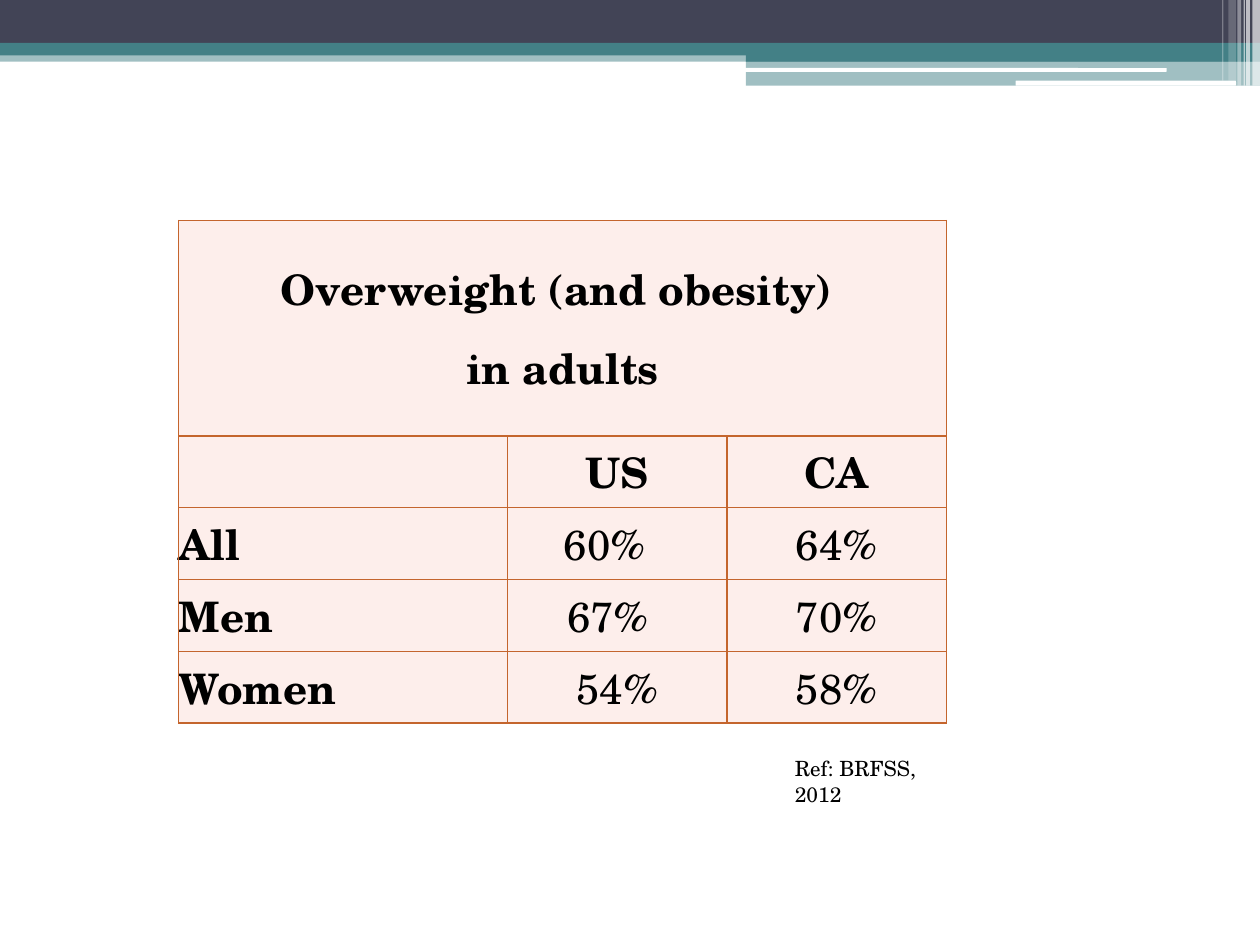
from lxml import etree
from pptx import Presentation
from pptx.dml.color import RGBColor
from pptx.enum.shapes import MSO_SHAPE
from pptx.enum.text import MSO_ANCHOR, PP_ALIGN
from pptx.oxml.ns import qn
from pptx.util import Inches, Pt

RECTANGLE, ROUNDED = MSO_SHAPE.RECTANGLE, MSO_SHAPE.ROUNDED_RECTANGLE
LEFT, CENTER, MIDDLE = PP_ALIGN.LEFT, PP_ALIGN.CENTER, MSO_ANCHOR.MIDDLE
FONT = "TeX Gyre Schola"
NAVY, TEAL, WHITE, BLACK = "424456", "438086", "FFFFFF", "000000"
CELL_FILL, BORDER = "FDEEEB", "C4652D"

BANNER = [
    (RECTANGLE, 0, 0.4, 10, 0.09, TEAL, 50),
    (RECTANGLE, 0, 0, 10, 0.34, NAVY, 100),
    (RECTANGLE, 0, 0.34, 10, 0.1, TEAL, 100),
    (RECTANGLE, 5.92, 0.39, 4.08, 0.1, TEAL, 100),
    (RECTANGLE, 5.92, 0.48, 4.08, 0.2, TEAL, 50),
    (ROUNDED, 5.91, 0.54, 3.35, 0.03, WHITE, 100),
    (ROUNDED, 8.06, 0.64, 1.75, 0.04, WHITE, 100),
]
STRIPES = [
    (9.94, 0.06, 0.68, 65),
    (9.89, 0.03, 0.68, 65),
    (9.87, 0.01, 0.68, 60),
    (9.82, 0.03, 0.68, 40),
    (9.75, 0.06, 0.64, 20),
    (9.7, 0.01, 0.64, 30),
]
TITLE = ["Overweight (and obesity) ", "in adults"]
ROWS = [
    ("", "US", "CA"),
    ("All", "60%", "64%"),
    ("Men", "67%", "70%"),
    ("Women", "54%", "58%"),
]
RIGHT_MARGINS = {"60%": 0.2, "67%": 0.15}
COLUMN_WIDTHS = [2.61, 1.74, 1.74]
ROW_HEIGHTS = [1.71] + [0.57] * len(ROWS)
REFERENCE = "Ref: BRFSS, 2012"


def color(value):
    """Turn a hex string into a colour."""
    return RGBColor.from_string(value)


def add_bar(slide, kind, left, top, width, height, fill, opacity):
    """Add a borderless bar with an opacity in percent."""
    shape = slide.shapes.add_shape(
        kind, Inches(left), Inches(top), Inches(width), Inches(height))
    shape.shadow.inherit = False
    shape.line.fill.background()
    shape.fill.solid()
    shape.fill.fore_color.rgb = color(fill)
    if opacity < 100:
        value = shape._element.spPr.find(".//" + qn("a:srgbClr"))
        etree.SubElement(value, qn("a:alpha"), val=str(opacity * 1000))


def write(frame, lines, size, bold=False, alignment=LEFT, gap=0):
    """Write one paragraph per line into a text frame."""
    for index, line in enumerate(lines):
        paragraph = frame.add_paragraph() if index else frame.paragraphs[0]
        paragraph.alignment = alignment
        if index:
            paragraph.space_before = Pt(gap)
        paragraph.text = line
        style = {"name": FONT, "size": Pt(size), "bold": bold}
        for name, value in style.items():
            setattr(paragraph.font, name, value)
        paragraph.font.color.rgb = color(BLACK)


def format_cell(cell, right_margin=0):
    """Give a cell its borders, fill, anchor and margins."""
    properties = cell._tc.get_or_add_tcPr()
    for side in ("lnL", "lnR", "lnT", "lnB"):
        line = etree.SubElement(properties, qn("a:" + side), w=str(Pt(0.75)))
        fill = etree.SubElement(line, qn("a:solidFill"))
        etree.SubElement(fill, qn("a:srgbClr"), val=BORDER)
    cell.fill.solid()
    cell.fill.fore_color.rgb = color(CELL_FILL)
    layout = {"vertical_anchor": MIDDLE, "margin_left": 0, "margin_top": 0,
              "margin_bottom": 0, "margin_right": Inches(right_margin)}
    for name, value in layout.items():
        setattr(cell, name, value)


def add_obesity_table(slide):
    """Add the table of overweight adults."""
    table = slide.shapes.add_table(
        len(ROW_HEIGHTS), len(COLUMN_WIDTHS), Inches(1.42), Inches(1.75),
        Inches(sum(COLUMN_WIDTHS)), Inches(sum(ROW_HEIGHTS))).table
    for column, width in zip(table.columns, COLUMN_WIDTHS):
        column.width = Inches(width)
    for row, height in zip(table.rows, ROW_HEIGHTS):
        row.height = Inches(height)
    for cell in table.rows[0].cells:
        format_cell(cell)
    title = table.cell(0, 0)
    title.merge(table.cell(0, len(COLUMN_WIDTHS) - 1))
    write(title.text_frame, TITLE, 24, True, CENTER, 8)
    for row, values in enumerate(ROWS, 1):
        for column, value in enumerate(values):
            cell = table.cell(row, column)
            format_cell(cell, RIGHT_MARGINS.get(value, 0))
            write(cell.text_frame, [value], 24, row == 1 or column == 0,
                  CENTER if column else LEFT)


def main():
    """Build the slide and save it."""
    presentation = Presentation()
    presentation.slide_width = Inches(10)
    presentation.slide_height = Inches(7.5)
    slide = presentation.slides.add_slide(presentation.slide_layouts[6])
    for bar in BANNER:
        add_bar(slide, *bar)
    for left, width, height, opacity in STRIPES:
        add_bar(slide, RECTANGLE, left, 0, width, height, WHITE, opacity)
    add_obesity_table(slide)
    reference = slide.shapes.add_textbox(
        Inches(6.21), Inches(5.95), Inches(1.52), Inches(0.3))
    reference.text_frame.word_wrap = True
    write(reference.text_frame, [REFERENCE], 12)
    presentation.save("out.pptx")


if __name__ == "__main__":
    main()
